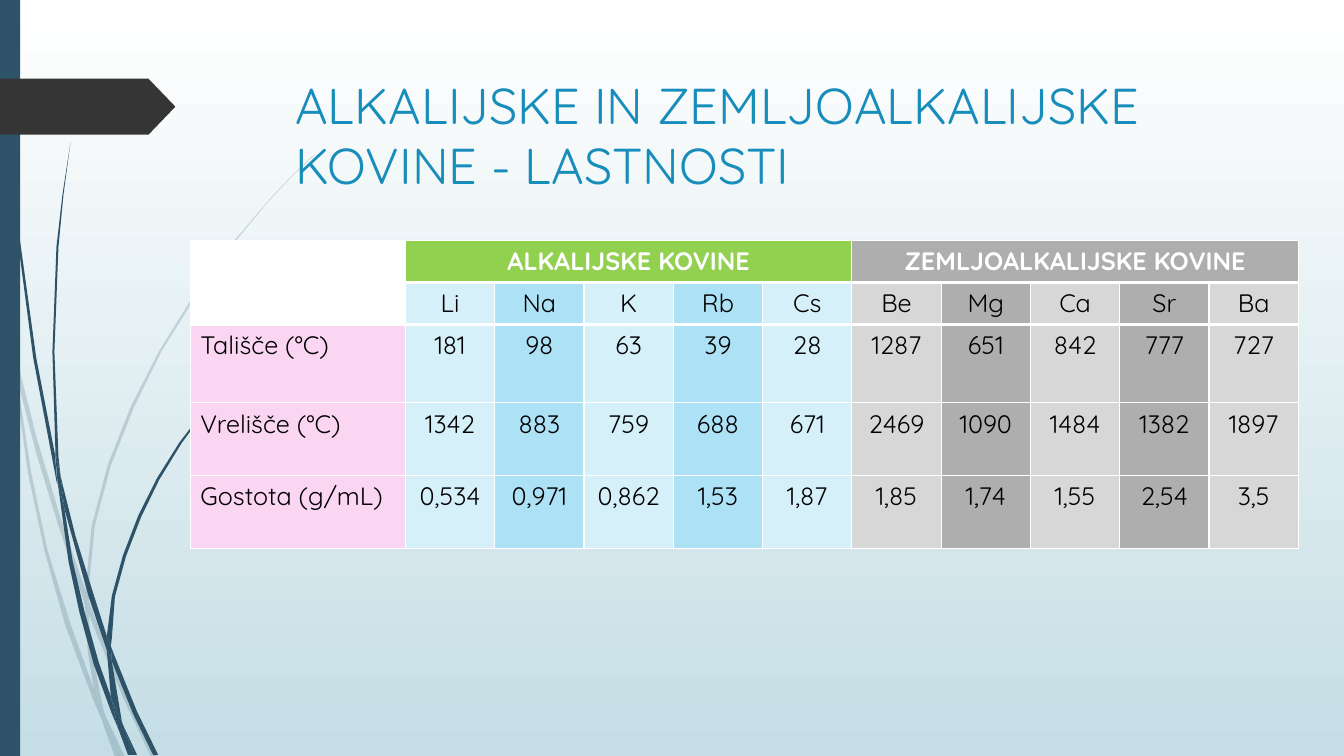
from lxml import etree
from pptx import Presentation
from pptx.dml.color import RGBColor
from pptx.enum import shapes, text
from pptx.oxml.ns import qn
from pptx.util import Pt

FONT = "Quicksand"
NAVY = "2E5369"
WHITE = "FFFFFF"
GREEN, GREY = "92D050", "AEAEAE"
BLUES = ("D6F0FA", "ADE1F5")
GREYS = ("D7D7D7", GREY)
PINK = "FAD6F2"

# Outlines of the grass, in units of 0.72 pt
GRASS_UNIT = Pt(0.72)
PALE_GRASS = [
    [(11, 350), (9, 322), (0, 282), (0, 299), (10, 344)],
    [(58, 522), (84, 599), (85, 586), (62, 520), (36, 433), (14, 345),
     (17, 376), (36, 450)],
    [(92, 607), (88, 596), (88, 610), (123, 694), (150, 751), (155, 751),
     (127, 692)],
    [(119, 751), (124, 751), (105, 711)],
    [(93, 683), (70, 619), (47, 545), (31, 469), (17, 376), (11, 350),
     (28, 470), (44, 546), (65, 621), (92, 693), (101, 714), (99, 707)],
    [(84, 599), (87, 646), (93, 683), (96, 692), (105, 711), (103, 706),
     (91, 646), (88, 610), (88, 608)],
    [(88, 584), (94, 522), (110, 462), (133, 404), (160, 349), (193, 296),
     (229, 245), (268, 198), (290, 175), (312, 154), (312, 153), (289, 175),
     (268, 197), (228, 244), (191, 295), (158, 348), (130, 403), (107, 461),
     (91, 522), (85, 584), (85, 586), (88, 596)],
    [(101, 714), (114, 751), (119, 751)],
    [(88, 608), (88, 610), (88, 596), (85, 586), (84, 599)],
    [(96, 692), (93, 683), (99, 707), (101, 714), (119, 751), (105, 711)],
]
DARK_GRASS = [
    [(7, 110), (17, 233), (33, 355), (56, 477), (57, 481), (55, 457),
     (55, 453), (36, 355), (19, 232), (8, 109), (5, 48), (4, 0), (3, 0),
     (4, 48)],
    [(88, 592), (106, 645), (106, 633), (106, 631), (93, 590), (75, 532),
     (60, 472), (64, 505)],
    [(113, 649), (110, 641), (111, 656), (132, 708), (152, 749), (157, 749),
     (136, 706)],
    [(110, 691), (98, 657), (84, 607), (72, 556), (64, 505), (57, 477),
     (68, 557), (79, 608), (93, 659), (111, 708), (117, 722), (116, 717)],
    [(60, 472), (58, 453), (54, 349), (58, 245), (63, 193), (70, 141),
     (62, 193), (56, 245), (52, 349), (55, 449)],
    [(133, 749), (136, 749), (122, 719)],
    [(57, 477), (64, 505), (60, 472), (55, 449), (55, 453)],
    [(111, 633), (114, 592), (125, 552), (140, 513), (158, 476), (180, 440),
     (205, 406), (231, 374), (245, 359), (261, 344), (260, 344), (245, 358),
     (231, 373), (204, 405), (178, 439), (156, 474), (137, 512), (122, 551),
     (111, 591), (106, 631), (110, 641)],
    [(117, 722), (127, 749), (131, 749)],
    [(106, 645), (110, 691), (116, 706), (122, 719), (121, 716), (111, 656),
     (109, 651)],
    [(106, 645), (109, 651), (111, 656), (110, 641), (106, 631), (106, 633)],
    [(116, 706), (110, 691), (116, 717), (117, 722), (130, 749), (133, 749),
     (122, 719)],
]

COLUMNS = {
    "Li": ("181", "1342", "0,534"),
    "Na": ("98", "883", "0,971"),
    "K": ("63", "759", "0,862"),
    "Rb": ("39", "688", "1,53"),
    "Cs": ("28", "671", "1,87"),
    "Be": ("1287", "2469", "1,85"),
    "Mg": ("651", "1090", "1,74"),
    "Ca": ("842", "1484", "1,55"),
    "Sr": ("777", "1382", "2,54"),
    "Ba": ("727", "1897", "3,5"),
}
PROPERTIES = ("Tališče (°C)", "Vrelišče (°C)", "Gostota (g/mL)")
ROW_HEIGHTS = (30, 30, 56, 52, 52)
LABEL_WIDTH, VALUE_WIDTH = 153.6, 63.8


def rgb(color):
    return RGBColor.from_string(color)


def paint(sp, color, alpha=None):
    """Give a shape a plain fill, with alpha in percent, and no line."""
    sp.shadow.inherit = False
    sp.fill.solid()
    sp.fill.fore_color.rgb = rgb(color)
    sp.line.fill.background()
    if alpha is not None:
        clr = sp._element.spPr.find(qn("a:solidFill"))[0]
        etree.SubElement(clr, qn("a:alpha"), val=str(alpha * 1000))


def set_background(slide, top, bottom):
    fill = slide.background.fill
    fill.gradient()
    fill.gradient_angle = 270
    for stop, color, pos in zip(fill.gradient_stops, (top, bottom), (0, 1)):
        stop.color.rgb = rgb(color)
        stop.position = pos


def add_grass(slide, outlines, color, alpha=None):
    for start, *rest in outlines:
        builder = slide.shapes.build_freeform(*start, scale=GRASS_UNIT)
        builder.add_line_segments(rest, close=True)
        paint(builder.convert_to_shape(), color, alpha)


def add_block(slide, kind, x, y, w, h, color):
    sp = slide.shapes.add_shape(kind, Pt(x), Pt(y), Pt(w), Pt(h))
    paint(sp, color)
    return sp


def set_title(slide, words):
    title = slide.shapes.title
    title.left, title.top, title.width, title.height = map(
        Pt, (203.8, 49, 702, 101))
    tf = title.text_frame
    tf.text = words
    tf.word_wrap = True
    tf.auto_size = text.MSO_AUTO_SIZE.NONE
    tf.vertical_anchor = text.MSO_ANCHOR.TOP
    p = tf.paragraphs[0]
    p.alignment = text.PP_ALIGN.LEFT
    p.line_spacing = 1
    p.font.name, p.font.size = FONT, Pt(36)
    p.font.color.rgb = rgb("178DBB")


def fill_cell(cell, words, fill, color="000000", bold=False, centred=True):
    cell.fill.solid()
    cell.fill.fore_color.rgb = rgb(fill)
    p = cell.text_frame.paragraphs[0]
    p.text = words
    p.alignment = text.PP_ALIGN.CENTER if centred else text.PP_ALIGN.LEFT
    p.font.name, p.font.size, p.font.bold = FONT, Pt(18), bold
    p.font.color.rgb = rgb(color)


def set_border(cell, side, color, width):
    """Draw one border; side is the line's tag, such as lnB."""
    line = etree.Element(qn(f"a:{side}"), w=str(Pt(width)))
    fill = etree.SubElement(line, qn("a:solidFill"))
    etree.SubElement(fill, qn("a:srgbClr"), val=color)
    cell._tc.get_or_add_tcPr().insert(0, line)


def add_metals_table(slide):
    n = len(COLUMNS)
    table = slide.shapes.add_table(
        len(ROW_HEIGHTS), n + 1, Pt(136), Pt(171.8),
        Pt(LABEL_WIDTH + n * VALUE_WIDTH), Pt(sum(ROW_HEIGHTS))).table
    table.horz_banding = False
    for row, height in zip(table.rows, ROW_HEIGHTS):
        row.height = Pt(height)
    for i, col in enumerate(table.columns):
        col.width = Pt(VALUE_WIDTH if i else LABEL_WIDTH)

    groups = (("ALKALIJSKE KOVINE", GREEN), ("ZEMLJOALKALIJSKE KOVINE", GREY))
    for (name, fill), first in zip(groups, (1, 6)):
        table.cell(0, first).merge(table.cell(0, first + 4))
        fill_cell(table.cell(0, first), name, fill, WHITE, bold=True)

    for i, label in enumerate(("", "", *PROPERTIES)):
        fill_cell(table.cell(i, 0), label, PINK if label else WHITE,
                  centred=False)
    for j, (symbol, values) in enumerate(COLUMNS.items()):
        shades = BLUES if j < 5 else GREYS
        for i, words in enumerate((symbol, *values), start=1):
            fill_cell(table.cell(i, j + 1), words, shades[j % 5 % 2])
    for j in range(n + 1):
        set_border(table.cell(0, j), "lnB", WHITE, 3)
        set_border(table.cell(1, j), "lnT", WHITE, 3)


def main():
    prs = Presentation()
    prs.slide_width, prs.slide_height = Pt(960), Pt(540)
    slide = prs.slides.add_slide(prs.slide_layouts[5])
    set_background(slide, WHITE, "C5DEE5")
    add_grass(slide, PALE_GRASS, NAVY, alpha=20)
    add_grass(slide, DARK_GRASS, NAVY)
    add_block(slide, shapes.MSO_SHAPE.RECTANGLE, 0, 0, 14.4, 540, NAVY)
    tab = add_block(slide, shapes.MSO_SHAPE.PENTAGON, 0, 56.2, 125.3, 40, "353535")
    tab.adjustments[0] = 0.48
    set_title(slide, "ALKALIJSKE IN ZEMLJOALKALIJSKE KOVINE - LASTNOSTI")
    add_metals_table(slide)
    prs.save("out.pptx")


if __name__ == "__main__":
    main()
